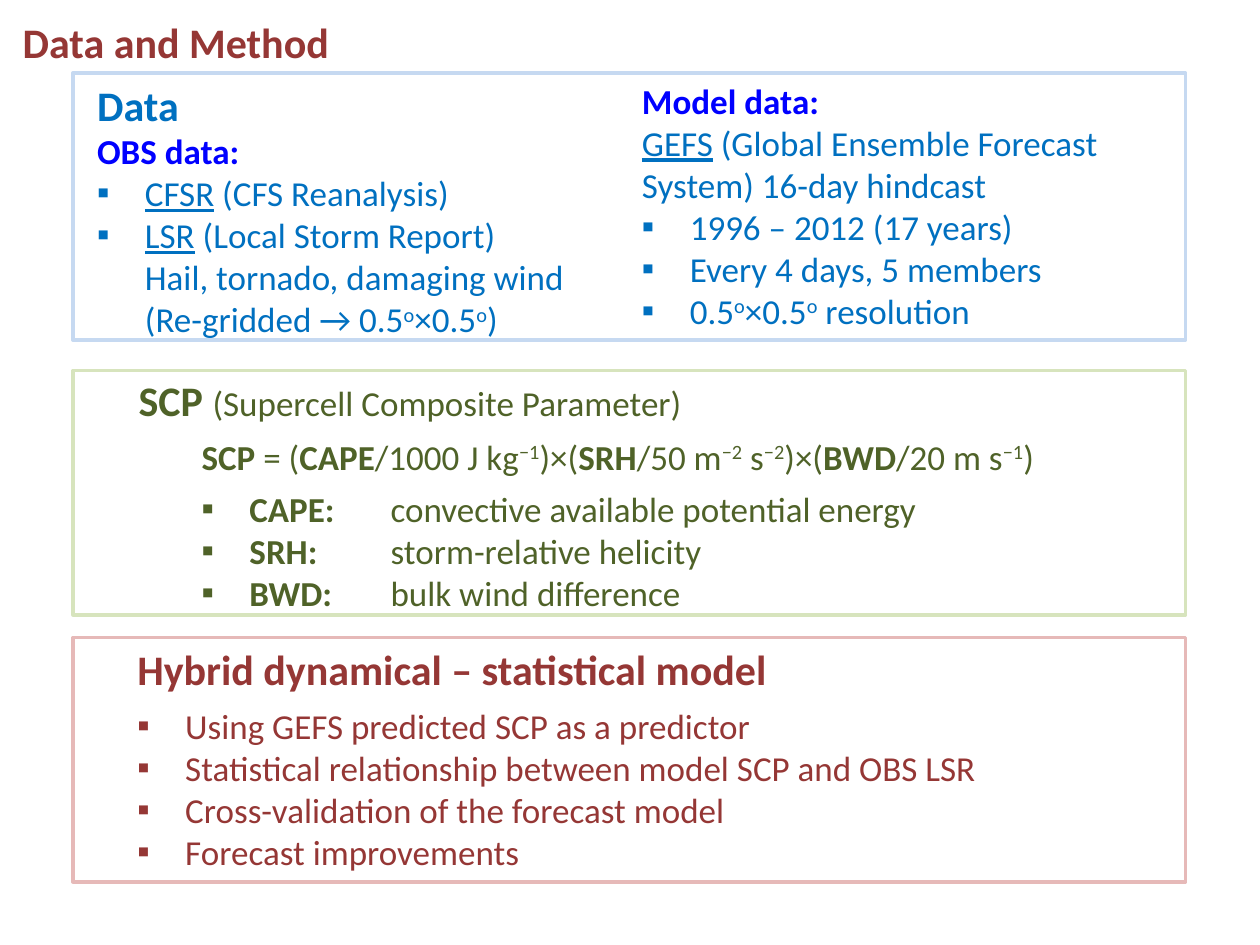
from lxml import etree
from pptx import Presentation
from pptx.dml.color import RGBColor
from pptx.enum import shapes, text
from pptx.oxml import ns
from pptx.util import Inches, Pt

COLORS = {
    "red": "953735", "blue": "0070C0", "bright": "0000FF", "green": "4F6228",
    "blue_line": "C6D9F1", "green_line": "D7E4BD", "red_line": "E6B9B8",
}
FONT = "Calibri"
HANG = 0.38
PANEL_LEFT, PANEL_WIDTH = 0.58, 8.83
B, U, SUP = "bold", "underline", "superscript"
HEAD = {"size": 24}
DEGREE = [("o", SUP), "×0.5", ("o", SUP)]


def rgb(name):
    return RGBColor.from_string(COLORS[name])


def para(*runs, before=0, after=0, indent=0, bullet=False):
    return {"runs": runs, "before": before, "after": after,
            "indent": indent, "bullet": bullet}


def item(*runs, indent=0):
    return para(*runs, indent=indent, bullet=True)


def add_run(p, run, color):
    """A run is plain text or (text, style, overrides)."""
    words, style, extra = ((run, None, {}) if isinstance(run, str)
                           else (*run, {})[:3])
    r = p.add_run()
    r.text = words
    formats = {"name": FONT, "size": Pt(extra.get("size", 20)),
               "bold": style == B, "underline": style == U}
    for key, value in formats.items():
        setattr(r.font, key, value)
    r.font.color.rgb = rgb(extra.get("color", color))
    if style == SUP:
        r.font._element.set("baseline", "30000")


def format_para(p, spec_):
    formats = {"alignment": text.PP_ALIGN.LEFT, "line_spacing": 1.0,
               "space_before": Pt(spec_["before"]),
               "space_after": Pt(spec_["after"])}
    for key, value in formats.items():
        setattr(p, key, value)
    pPr = p._p.get_or_add_pPr()
    hang = HANG if spec_["bullet"] else 0
    pPr.set("marL", str(Inches(spec_["indent"] + hang)))
    pPr.set("indent", str(-Inches(hang)))
    pPr.set("defTabSz", str(Inches(1)))
    if spec_["bullet"]:
        etree.SubElement(pPr, ns.qn("a:buFont")).set("typeface", FONT)
        etree.SubElement(pPr, ns.qn("a:buChar")).set("char", "▪")
    else:
        etree.SubElement(pPr, ns.qn("a:buNone"))


def fill_text(sp, box, color, paras):
    """Place a placeholder in its box and write its paragraphs."""
    sp.left, sp.top, sp.width, sp.height = map(Inches, box)
    tf = sp.text_frame
    formats = {"word_wrap": True, "auto_size": text.MSO_AUTO_SIZE.NONE,
               "vertical_anchor": text.MSO_ANCHOR.TOP}
    for key, value in formats.items():
        setattr(tf, key, value)
    for i, content in enumerate(paras):
        p = tf.add_paragraph() if i else tf.paragraphs[0]
        format_para(p, content)
        for run in content["runs"]:
            add_run(p, run, color)


def add_frame(s, box, color):
    sp = s.shapes.add_shape(shapes.MSO_SHAPE.RECTANGLE, *map(Inches, box))
    sp.shadow.inherit = False
    sp.fill.background()
    sp.line.color.rgb = rgb(color)
    sp.line.width = Pt(2)


def data_panel(s, box, obs, model):
    left, top, width, height = box
    add_frame(s, box, "blue_line")
    fill_text(obs, (left + 0.09, top, 4, 2.26), "blue", [
        para(("Data", B, HEAD)),
        para(("OBS data:", B, {"color": "bright"})),
        item(("CFSR", U), " (CFS Reanalysis)"),
        item(("LSR", U), " (Local Storm Report)"),
        para("Hail, tornado, damaging wind", indent=HANG),
        para("(Re-gridded → 0.5", *DEGREE, ")", indent=HANG),
    ])
    fill_text(model, (left + width / 2, top, 4.31, height), "blue", [
        para(("Model data:", B, {"color": "bright"})),
        para(("GEFS", U),
             " (Global Ensemble Forecast System) 16-day hindcast"),
        item("1996 – 2012 (17 years)"),
        item("Every 4 days, 5 members"),
        item("0.5", *DEGREE, " resolution"),
    ])


def scp_panel(s, box, body):
    left, top, width, height = box
    add_frame(s, box, "green_line")
    terms = [("CAPE", "convective available potential energy"),
             ("SRH", "storm-relative helicity"),
             ("BWD", "bulk wind difference")]
    fill_text(body, (left + 0.42, top - 0.02, 7.51, 2.02), "green", [
        para(("SCP ", B, HEAD), "(Supercell Composite Parameter)"),
        para(("SCP", B), " = (", ("CAPE", B), "/1000 J kg", ("−1", SUP),
             ")×(", ("SRH", B), "/50 m", ("−2", SUP), " s", ("−2", SUP),
             ")×(", ("BWD", B), "/20 m s", ("−1", SUP), ")",
             before=6, after=6, indent=0.5),
        *[item((f"{name}: \t", B), meaning, indent=0.5)
          for name, meaning in terms],
    ])


def model_panel(s, box, body):
    left, top, width, height = box
    add_frame(s, box, "red_line")
    fill_text(body, (left + 0.41, top, 6.93, height), "red", [
        para(("Hybrid dynamical – statistical model", B, HEAD), after=6),
        item("Using GEFS predicted SCP as a predictor"),
        item("Statistical relationship between model SCP and OBS LSR"),
        item("Cross-validation of the forecast model"),
        item("Forecast improvements"),
    ])


def main():
    prs = Presentation()
    prs.slide_width, prs.slide_height = Inches(10), Inches(7.5)
    # The Comparison layout has a title and four bodies
    s = prs.slides.add_slide(prs.slide_layouts.get_by_name("Comparison"))
    title, obs, model, scp, hybrid = s.placeholders

    fill_text(title, (0.08, 0.08, 3.58, 0.5), "red",
              [para(("Data and Method", B, HEAD), after=6)])
    data_panel(s, (PANEL_LEFT, 0.58, PANEL_WIDTH, 2.12), obs, model)
    scp_panel(s, (PANEL_LEFT, 2.94, PANEL_WIDTH, 1.94), scp)
    model_panel(s, (PANEL_LEFT, 5.06, PANEL_WIDTH, 1.94), hybrid)
    prs.save("out.pptx")


if __name__ == "__main__":
    main()
